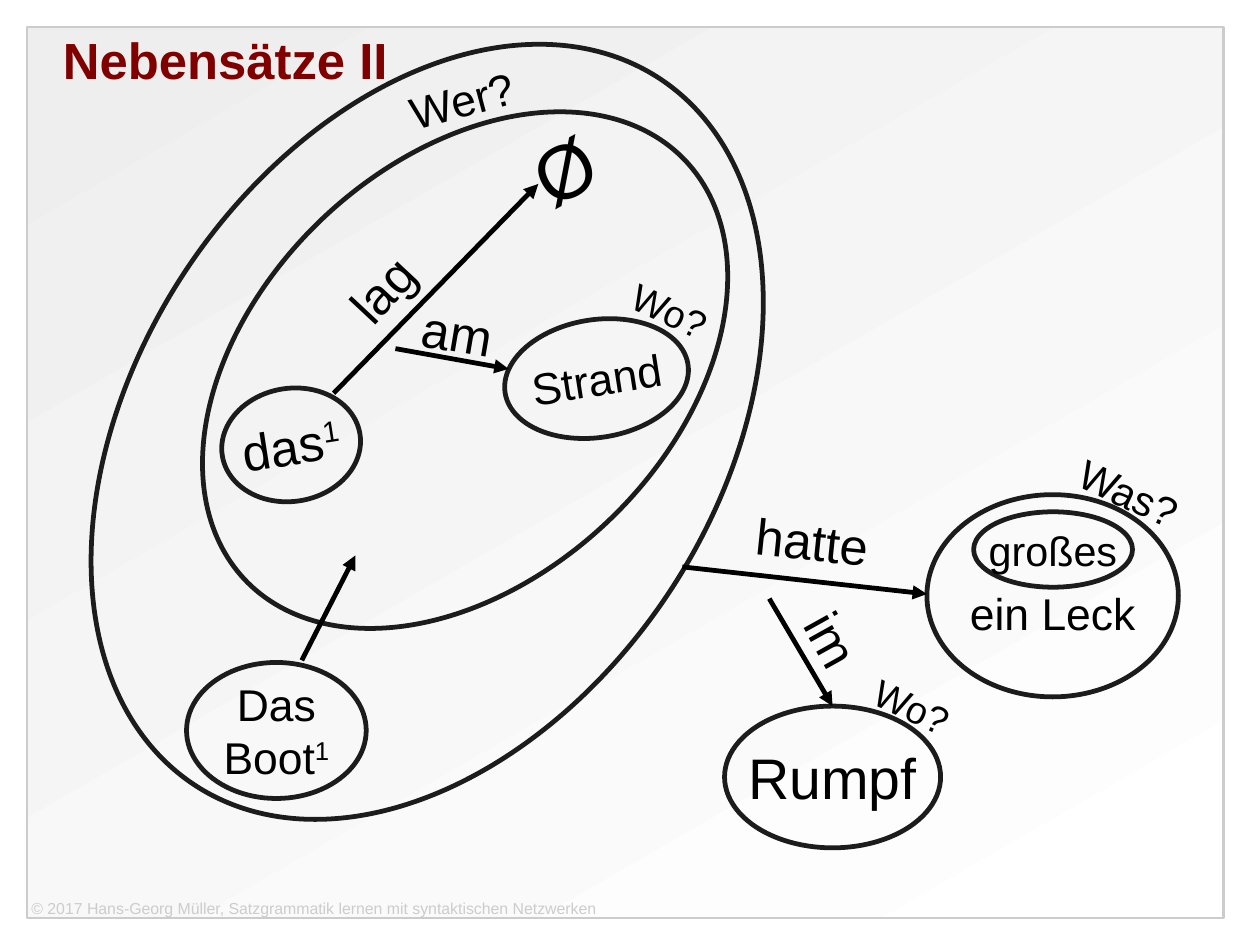
from lxml.etree import SubElement
from pptx import Presentation
from pptx.dml.color import RGBColor
from pptx.enum.shapes import MSO_CONNECTOR, MSO_SHAPE
from pptx.enum.text import MSO_ANCHOR, PP_ALIGN
from pptx.oxml.ns import qn
from pptx.util import Pt

FONT = "Arial"
TITLE = "Nebensätze II"
CREDIT = "© 2017 Hans-Georg Müller, Satzgrammatik lernen mit syntaktischen Netzwerken"

# Bubbles: name, left, top, width, height, turn, size, lines of (word, index)
BUBBLES = [
    ("boot", 117.5, 417.3, 113.2, 85.7, 0, 28, [("Das", ""), ("Boot", "1")]),
    ("leck", 583.9, 311.6, 158.4, 127.4, 0, 28, [("ein Leck", "")]),
    ("inner", 101.5, 102.1, 383, 262.1, 316.3, 0, []),
    ("das", 139.5, 244.6, 87.8, 71.3, 351.1, 32, [("das", "1")]),
    ("strand", 317.5, 201.4, 116.6, 74.2, 351.1, 28, [("Strand", "")]),
    ("outer", 2.7, 89.1, 532.8, 365.8, 123.4, 0, []),
    ("rumpf", 456.4, 444.8, 136.1, 89.3, 0, 36, [("Rumpf", "")]),
    ("large", 613.3, 322.4, 100.1, 47.5, 0, 26, [("großes", "")]),
]
DROP = 22  # lowers "ein Leck" below the bubble inside it

# Arrows: start x, y, end x, y, bubble whose top is met
ARROWS = [
    (429.8, 357.1, 583.9, 374.2, None),
    (249.1, 219.6, 320.4, 232.4, None),
    (210.2, 247.7, 339.1, 115.9, None),
    (484.6, 377.1, 524.45, 444.8, "rumpf"),
    (190.1, 416, 223.9, 349.9, None),
]

# Labels: word, left, top, width, height, turn, size
LABELS = [
    ("Was?", 668.2, 292.1, 87.8, 51.8, 25, 26),
    ("Wer?", 250.6, 41.8, 84.2, 40.3, 345, 28),
    ("Ø", 330.5, 74.2, 48.2, 69.1, 331.1, 48),
    ("Wo?", 542.8, 426.8, 64.2, 36.7, 25, 24),
    ("Wo?", 390.2, 177.8, 64.2, 36.7, 25, 24),
    ("lag", 209.4, 153.3, 73.4, 46.1, 313, 32),
    ("am", 259, 187.7, 73.4, 46.1, 9.7, 32),
    ("im", 493.8, 390.9, 73.4, 46.1, 61, 32),
    ("hatte", 469.3, 318.1, 90, 46.1, 6, 32),
]


def paint(color, code):
    color.rgb = RGBColor.from_string(code)


def pad(frame, side, top, extra=0):
    frame.margin_left = frame.margin_right = Pt(side)
    frame.margin_top, frame.margin_bottom = Pt(top + extra), Pt(top)


def write(para, text, size, code="000000", bold=False):
    run = para.add_run()
    run.text = text
    font = run.font
    font.name, font.size, font.bold = FONT, Pt(size), bold
    paint(font.color, code)
    return run


def add_form(shapes, kind, box, code, width):
    form = shapes.add_shape(kind, *map(Pt, box))
    form.shadow.inherit = False
    form.fill.background()
    paint(form.line.color, code)
    form.line.width = Pt(width)
    return form


def add_label(shapes, text, box, turn, size, code="000000", inset=(7.2, 3.6)):
    label = shapes.add_textbox(*map(Pt, box))
    label.rotation = turn
    frame = label.text_frame
    frame.word_wrap = True
    pad(frame, *inset)
    write(frame.paragraphs[0], text, size, code)


def add_bubble(shapes, name, box, turn, size, lines):
    bubble = add_form(shapes, MSO_SHAPE.OVAL, box, "1C1C1C", 3)
    bubble.rotation = turn
    frame = bubble.text_frame
    frame.word_wrap = False
    frame.vertical_anchor = MSO_ANCHOR.MIDDLE
    pad(frame, 8.6, 5, DROP if name == "leck" else 0)
    for row, (word, index) in enumerate(lines):
        para = frame.add_paragraph() if row else frame.paragraphs[0]
        para.alignment = PP_ALIGN.CENTER
        write(para, word, size)
        if index:
            run = write(para, index, size)
            run._r.get_or_add_rPr().set("baseline", "33000")
    return bubble


def add_arrow(shapes, ends, goal):
    arrow = shapes.add_connector(MSO_CONNECTOR.STRAIGHT, *map(Pt, ends))
    paint(arrow.line.color, "000000")
    arrow.line.width = Pt(3)
    SubElement(arrow.line._get_or_add_ln(), qn("a:tailEnd"), type="triangle")
    SubElement(arrow._element.spPr, qn("a:effectLst"))
    if goal is not None:
        arrow.end_connect(goal, 0)


def main():
    deck = Presentation()
    deck.slide_width, deck.slide_height = Pt(793.7), Pt(595.28)
    slide = deck.slides.add_slide(deck.slide_layouts[5])
    shapes = slide.shapes

    # Shaded frame, behind the title
    panel = add_form(shapes, MSO_SHAPE.RECTANGLE, (17, 17, 753.8, 561.3), "CCCCCC", 1.5)
    panel.fill.gradient()
    panel.fill.gradient_angle = 300
    for stop, place, code in zip(panel.fill.gradient_stops, (0, 1), ("EEEEEE", "FFFFFF")):
        stop.position = place
        paint(stop.color, code)
    shapes._spTree.insert(2, panel._element)

    # Title and credit line
    title = shapes.title
    title.left, title.top, title.width, title.height = map(Pt, (39.6, 19, 714.2, 36))
    frame = title.text_frame
    pad(frame, 0, 0)
    frame.vertical_anchor = MSO_ANCHOR.MIDDLE
    frame.paragraphs[0].alignment = PP_ALIGN.LEFT
    write(frame.paragraphs[0], TITLE, 32, "800000", True)
    add_label(shapes, CREDIT, (19.8, 566.3, 751, 11.5), 0, 10, "CCCCCC", (0, 0))

    # Sentence network
    nodes = {}
    for name, *box, turn, size, lines in BUBBLES:
        nodes[name] = add_bubble(shapes, name, box, turn, size, lines)
    for *ends, goal in ARROWS:
        add_arrow(shapes, ends, nodes.get(goal))
    for text, *box, turn, size in LABELS:
        add_label(shapes, text, box, turn, size)

    deck.save("out.pptx")


if __name__ == "__main__":
    main()
